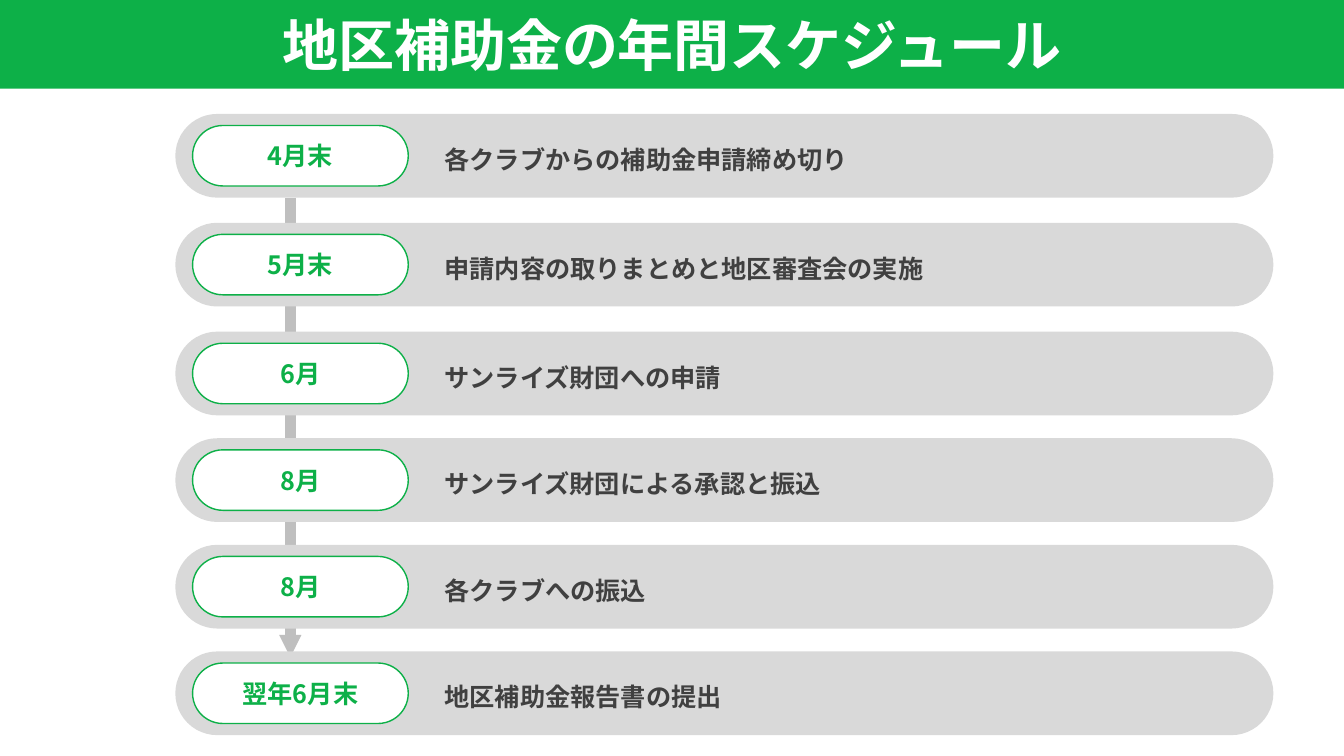
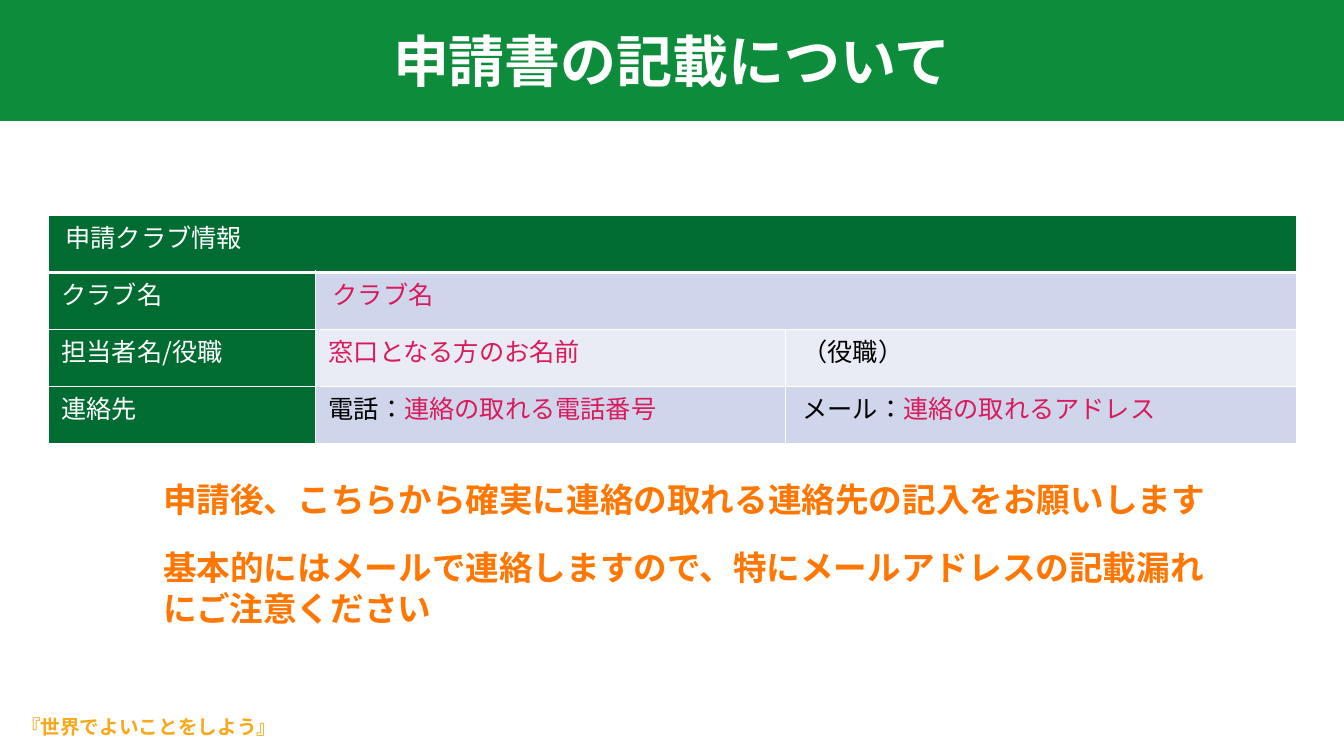
from itertools import accumulate

from lxml.etree import SubElement
from pptx import Presentation
from pptx.dml.color import RGBColor
from pptx.enum.lang import MSO_LANGUAGE_ID
from pptx.enum.shapes import MSO_CONNECTOR, MSO_SHAPE
from pptx.enum.text import MSO_ANCHOR, MSO_AUTO_SIZE, PP_ALIGN
from pptx.oxml.ns import qn
from pptx.util import Inches, Pt

FONT = "Noto Sans CJK JP"
WHITE, BLACK, DARK_GRAY = "FFFFFF", "000000", "404040"
BAR_GRAY, ARROW_GRAY = "D9D9D9", "BFBFBF"
GREEN, TITLE_GREEN, TABLE_GREEN = "0DB048", "0D8D3B", "006C31"
ORANGE, GOLD, PINK = "FF7600", "F7A81B", "D91A5C"
BLUE_TINT, PALE_TINT = "CFD5EA", "E9EBF5"


def color(value):
    return RGBColor.from_string(value)


class Deck:
    """Holds the style and the current slide; lengths are percent of the slide."""

    def __init__(self):
        self.presentation = Presentation()
        self.presentation.slide_width = Inches(13.33)
        self.presentation.slide_height = Inches(7.5)
        self.slide = None

    def across(self, share):
        return round(self.presentation.slide_width * share / 100)

    def down(self, share):
        return round(self.presentation.slide_height * share / 100)

    def box(self, left, top, width, height):
        return self.across(left), self.down(top), self.across(width), self.down(height)

    def add_slide(self, title, band_color, band_height):
        blank = self.presentation.slide_layouts[6]
        self.slide = self.presentation.slides.add_slide(blank)
        self.shape(MSO_SHAPE.RECTANGLE, (0, 0, 100, band_height), band_color,
                   text=title, size=40, text_color=WHITE)

    def add_runs(self, paragraph, runs, size, bold=False):
        """Add (text, colour) runs with the deck's font."""
        for text, text_color in runs:
            run = paragraph.add_run()
            run.text = text
            run.font.name = FONT
            run.font.size = Pt(size)
            run.font.bold = bold
            run.font.language_id = MSO_LANGUAGE_ID.JAPANESE
            run.font.color.rgb = color(text_color)
            SubElement(run.font._element, qn("a:ea"), typeface=FONT)

    def shape(self, kind, place, fill, line=None, text=None, size=18, text_color=GREEN):
        shape = self.slide.shapes.add_shape(kind, *self.box(*place))
        shape.shadow.inherit = False
        shape.fill.solid()
        shape.fill.fore_color.rgb = color(fill)
        if line:
            shape.line.color.rgb = color(line)
            shape.line.width = Pt(1)
        else:
            shape.line.fill.background()
        if kind == MSO_SHAPE.ROUNDED_RECTANGLE:
            shape.adjustments[0] = 0.5
        if text:
            shape.text_frame.vertical_anchor = MSO_ANCHOR.MIDDLE
            paragraph = shape.text_frame.paragraphs[0]
            paragraph.alignment = PP_ALIGN.CENTER
            self.add_runs(paragraph, [(text, text_color)], size, bold=True)

    def text(self, place, lines, size, text_color, spacing=None,
             before=None, after=None, grow=True):
        frame = self.slide.shapes.add_textbox(*self.box(*place)).text_frame
        frame.word_wrap = True
        if grow:
            frame.auto_size = MSO_AUTO_SIZE.SHAPE_TO_FIT_TEXT
        for index, line in enumerate(lines):
            paragraph = frame.add_paragraph() if index else frame.paragraphs[0]
            paragraph.line_spacing = spacing
            if before:
                paragraph.space_before = Pt(before)
            if after:
                paragraph.space_after = Pt(after)
            self.add_runs(paragraph, [(line, text_color)], size, bold=True)

    def down_arrow(self, left, top, bottom, line_color, width):
        x = self.across(left)
        arrow = self.slide.shapes.add_connector(
            MSO_CONNECTOR.STRAIGHT, x, self.down(top), x, self.down(bottom))
        arrow.line.color.rgb = color(line_color)
        arrow.line.width = Pt(width)
        SubElement(arrow.line._get_or_add_ln(), qn("a:tailEnd"),
                   type="triangle", w="sm", len="sm")
        SubElement(arrow._element.spPr, qn("a:effectLst"))

    def table(self, place, column_widths, row_heights, rows, merges):
        """Rows hold (fill, runs, wide inset) cells; merges are (row, first, last)."""
        frame = self.slide.shapes.add_table(
            len(rows), len(column_widths), *self.box(*place))
        table = frame.table
        table.first_row = table.horz_banding = False
        for column, width in zip(table.columns, column_widths):
            column.width = self.across(width)
        for row, height in zip(table.rows, row_heights):
            row.height = self.down(height)
        for row, first, last in merges:
            table.cell(row, first).merge(table.cell(row, last))
        for row_index, row in enumerate(rows):
            for column_index, (fill, runs, wide) in enumerate(row):
                cell = table.cell(row_index, column_index)
                self.cell_borders(cell, bottom=1 if row_index else 3)
                cell.fill.solid()
                cell.fill.fore_color.rgb = color(fill)
                cell.vertical_anchor = MSO_ANCHOR.MIDDLE
                cell.margin_left = cell.margin_right = Inches(0.17 if wide else 0.13)
                cell.margin_top = cell.margin_bottom = Inches(0.08 if wide else 0)
                paragraph = cell.text_frame.paragraphs[0]
                paragraph.alignment = PP_ALIGN.JUSTIFY
                paragraph.line_spacing = Pt(15)
                self.add_runs(paragraph, runs, 18)

    def cell_borders(self, cell, bottom):
        properties = cell._tc.get_or_add_tcPr()
        for side, width in (("L", 1), ("R", 1), ("T", 1), ("B", bottom)):
            line = SubElement(properties, qn(f"a:ln{side}"), w=str(int(Pt(width))))
            fill = SubElement(line, qn("a:solidFill"))
            SubElement(fill, qn("a:srgbClr"), val=WHITE)


def add_schedule(deck):
    deck.add_slide("地区補助金の年間スケジュール", GREEN, 11.73)
    deck.down_arrow(21.6, 26.13, 86.93, ARROW_GRAY, 8)
    steps = [
        ("4月末", "各クラブからの補助金申請締め切り"),
        ("5月末", "申請内容の取りまとめと地区審査会の実施"),
        ("6月", "サンライズ財団への申請"),
        ("8月", "サンライズ財団による承認と振込"),
        ("8月", "各クラブへの振込"),
        ("翌年6月末", "地区補助金報告書の提出"),
    ]
    tops = accumulate([15.07, 14.4, 14.4, 14.1, 14.1, 14.1])
    bar_height, pill_height = 11.07, 8
    rounded = MSO_SHAPE.ROUNDED_RECTANGLE
    for top, (month, task) in zip(tops, steps):
        pill_top = top + (bar_height - pill_height) / 2
        deck.shape(rounded, (13.05, top, 81.7, bar_height), BAR_GRAY)
        deck.shape(rounded, (14.33, pill_top, 16.05, pill_height), WHITE, GREEN, month)
        deck.text((32.33, top + 2.55, 58.95, 5.87), [task], 18, DARK_GRAY, spacing=1.2)


def add_application(deck):
    deck.add_slide("申請書の記載について", TITLE_GREEN, 16)
    deck.text((11.4, 62.67, 79.9, 21.2), [
        "申請後、こちらから確実に連絡の取れる連絡先の記入をお願いします",
        "基本的にはメールで連絡しますので、特にメールアドレスの記載漏れにご注意ください",
    ], 24, ORANGE, before=10, after=10)

    def label(text, wide=False):
        return TABLE_GREEN, [(text, WHITE)], wide

    spanned_header = (TABLE_GREEN, [], True)
    rows = [
        [label("申請クラブ情報", wide=True), spanned_header, spanned_header],
        [label("クラブ名"),
         (BLUE_TINT, [("クラブ名", PINK)], True),
         (BLUE_TINT, [], True)],
        [label("担当者名/役職"),
         (PALE_TINT, [("窓口となる方のお名前", PINK)], False),
         (PALE_TINT, [("（役職）", BLACK)], True)],
        [label("連絡先"),
         (BLUE_TINT, [("電話：", BLACK), ("連絡の取れる電話番号", PINK)], False),
         (BLUE_TINT, [("メール：", BLACK), ("連絡の取れるアドレス", PINK)], True)],
    ]
    deck.table((3.6, 28.53, 92.87, 30.1), [19.88, 34.96, 38.03],
               [7.5, 7.6, 7.5, 7.5], rows, merges=[(0, 0, 2), (1, 1, 2)])
    deck.text((0.83, 94.27, 21.75, 4.13), ["『世界でよいことをしよう』"], 14, GOLD,
              spacing=0.9, before=10, grow=False)


def main():
    deck = Deck()
    add_schedule(deck)
    add_application(deck)
    deck.presentation.save("out.pptx")


if __name__ == "__main__":
    main()
